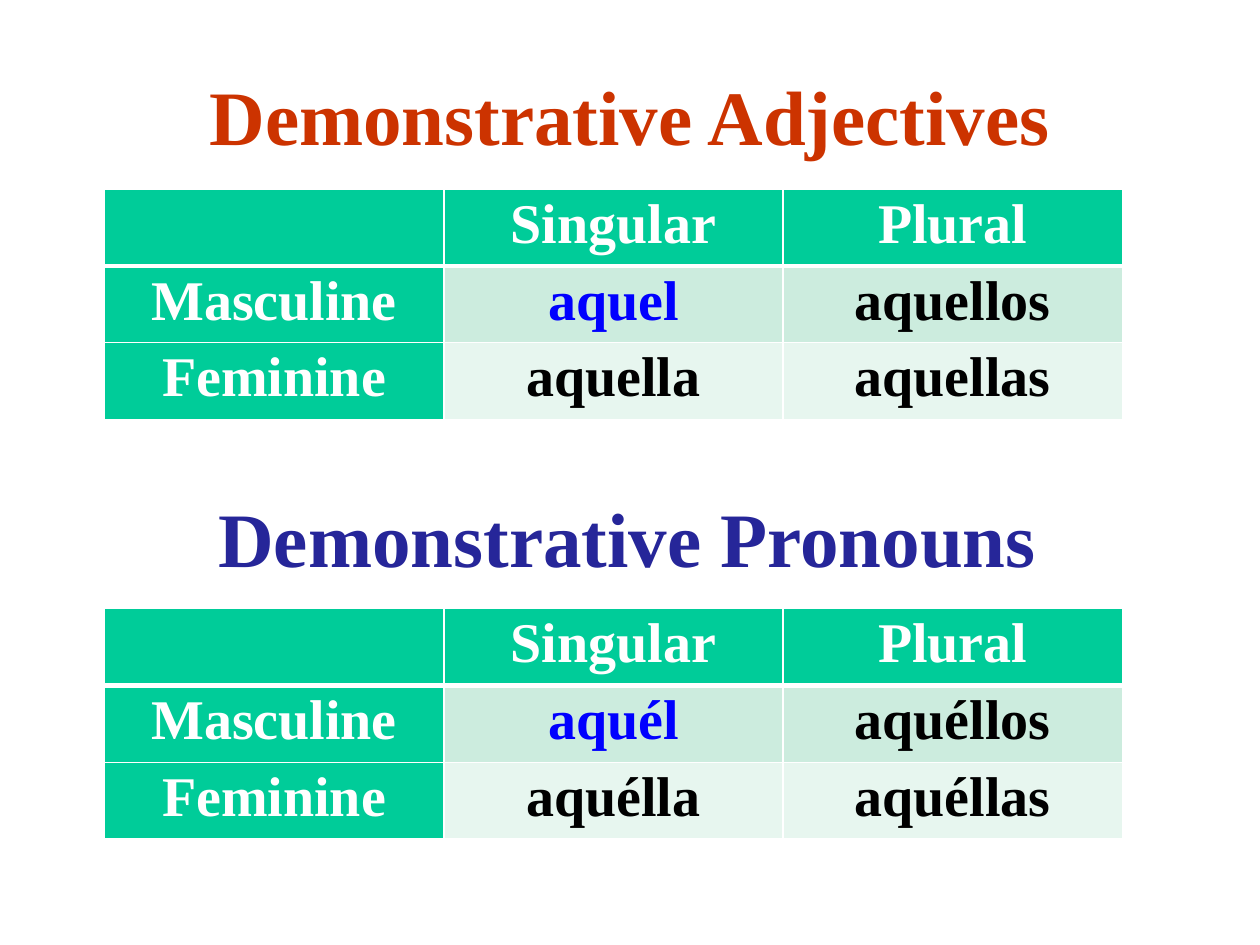
from dataclasses import dataclass

import pptx
import pptx.dml.color
import pptx.enum.text
import pptx.oxml
import pptx.oxml.ns
import pptx.util

Pt = pptx.util.Pt
Align = pptx.enum.text.PP_ALIGN
Anchor = pptx.enum.text.MSO_ANCHOR


@dataclass(frozen=True)
class Theme:
    font: str = "Times New Roman"
    head: int = 44
    body: int = 32
    green: str = "00CC99"
    bands: tuple = ("CCECDE", "E7F6EF")
    white: str = "FFFFFF"
    black: str = "000000"
    blue: str = "0000FF"
    red: str = "CC3300"
    navy: str = "262699"
    thin: int = 1
    thick: int = 3


@dataclass(frozen=True)
class Box:
    """A place on the slide, in shares of its width and height."""
    left: float
    top: float
    width: float
    height: float


@dataclass(frozen=True)
class Part:
    title: str
    color: str
    place: Box
    grid: Box
    forms: tuple


THEME = Theme()
WIDTH, HEIGHT = pptx.util.Inches(10), pptx.util.Inches(7.5)
HEADS = ("", "Singular", "Plural")
GENDERS = ("Masculine", "Feminine")
ROW, COL = 0.61 / 7.5, 0.2693
PARTS = (
    Part("Demonstrative Adjectives", THEME.red,
         Box(0.069, 0.4 / 7.5, 0.862, 1.02 / 7.5),
         Box(0.083, 1.5 / 7.5, 3 * COL, 3 * ROW),
         (("aquel", "aquellos"), ("aquella", "aquellas"))),
    Part("Demonstrative Pronouns", THEME.navy,
         Box(0.067, 3.75 / 7.5, 0.862, 1.02 / 7.5),
         Box(0.083, 4.83 / 7.5, 3 * COL, 3 * ROW),
         (("aquél", "aquéllos"), ("aquélla", "aquéllas"))),
)


def scale(box: Box) -> tuple:
    """Turn shares of the slide into lengths."""
    return (round(box.left * WIDTH), round(box.top * HEIGHT),
            round(box.width * WIDTH), round(box.height * HEIGHT))


def apply(target, values: dict) -> None:
    for name, value in values.items():
        setattr(target, name, value)


def write(para, text: str, size: int, color: str) -> None:
    para.alignment = Align.CENTER
    run = para.add_run()
    run.text = text
    apply(run.font, {"name": THEME.font, "size": Pt(size), "bold": True})
    run.font.color.rgb = pptx.dml.color.RGBColor.from_string(color)


def draw_head(shape, part: Part) -> None:
    left, top, width, height = scale(part.place)
    apply(shape, {"left": left, "top": top, "width": width, "height": height})
    frame = shape.text_frame
    apply(frame, {"word_wrap": True, "vertical_anchor": Anchor.MIDDLE,
                  "auto_size": pptx.enum.text.MSO_AUTO_SIZE.NONE})
    write(frame.paragraphs[0], part.title, THEME.head, part.color)


def edge(cell, row: int) -> None:
    """Rule the cell in white, with a thick line under the header."""
    widths = {"L": THEME.thin, "R": THEME.thin,
              "T": THEME.thick if row == 1 else THEME.thin,
              "B": THEME.thick if row == 0 else THEME.thin}
    props = cell._tc.get_or_add_tcPr()
    for spot, (side, width) in enumerate(widths.items()):
        props.insert(spot, pptx.oxml.parse_xml(
            f'<a:ln{side} {pptx.oxml.ns.nsdecls("a")} w="{Pt(width)}">'
            f'<a:solidFill><a:srgbClr val="{THEME.white}"/></a:solidFill>'
            f'</a:ln{side}>'))


def draw_cell(cell, text: str, row: int, col: int) -> None:
    label = row == 0 or col == 0
    fill = THEME.green if label else THEME.bands[row - 1]
    cell.fill.solid()
    cell.fill.fore_color.rgb = pptx.dml.color.RGBColor.from_string(fill)
    edge(cell, row)
    if not text:
        return
    side = pptx.util.Inches(0.07)
    apply(cell, {"margin_left": side, "margin_right": side,
                 "margin_top": 0, "margin_bottom": 0})
    para = cell.text_frame.paragraphs[0]
    apply(para, {"line_spacing": 1.07, "space_before": Pt(6),
                 "space_after": Pt(6)})
    first = (row, col) == (1, 1)
    color = THEME.white if label else THEME.blue if first else THEME.black
    write(para, text, THEME.body, color)


def draw_grid(slide, part: Part) -> None:
    rows = [HEADS] + [(name, *pair) for name, pair in zip(GENDERS, part.forms)]
    table = slide.shapes.add_table(len(rows), len(HEADS),
                                   *scale(part.grid)).table
    for row, texts in enumerate(rows):
        for col, text in enumerate(texts):
            draw_cell(table.cell(row, col), text, row, col)


def main() -> None:
    deck = pptx.Presentation()
    apply(deck, {"slide_width": WIDTH, "slide_height": HEIGHT})
    slide = deck.slides.add_slide(deck.slide_layouts.get_by_name("Title Only"))
    for part in PARTS:
        if part is PARTS[0]:
            shape = slide.shapes.title
        else:
            shape = slide.shapes.add_textbox(*scale(part.place))
        draw_head(shape, part)
        draw_grid(slide, part)
    deck.save("out.pptx")


if __name__ == "__main__":
    main()
